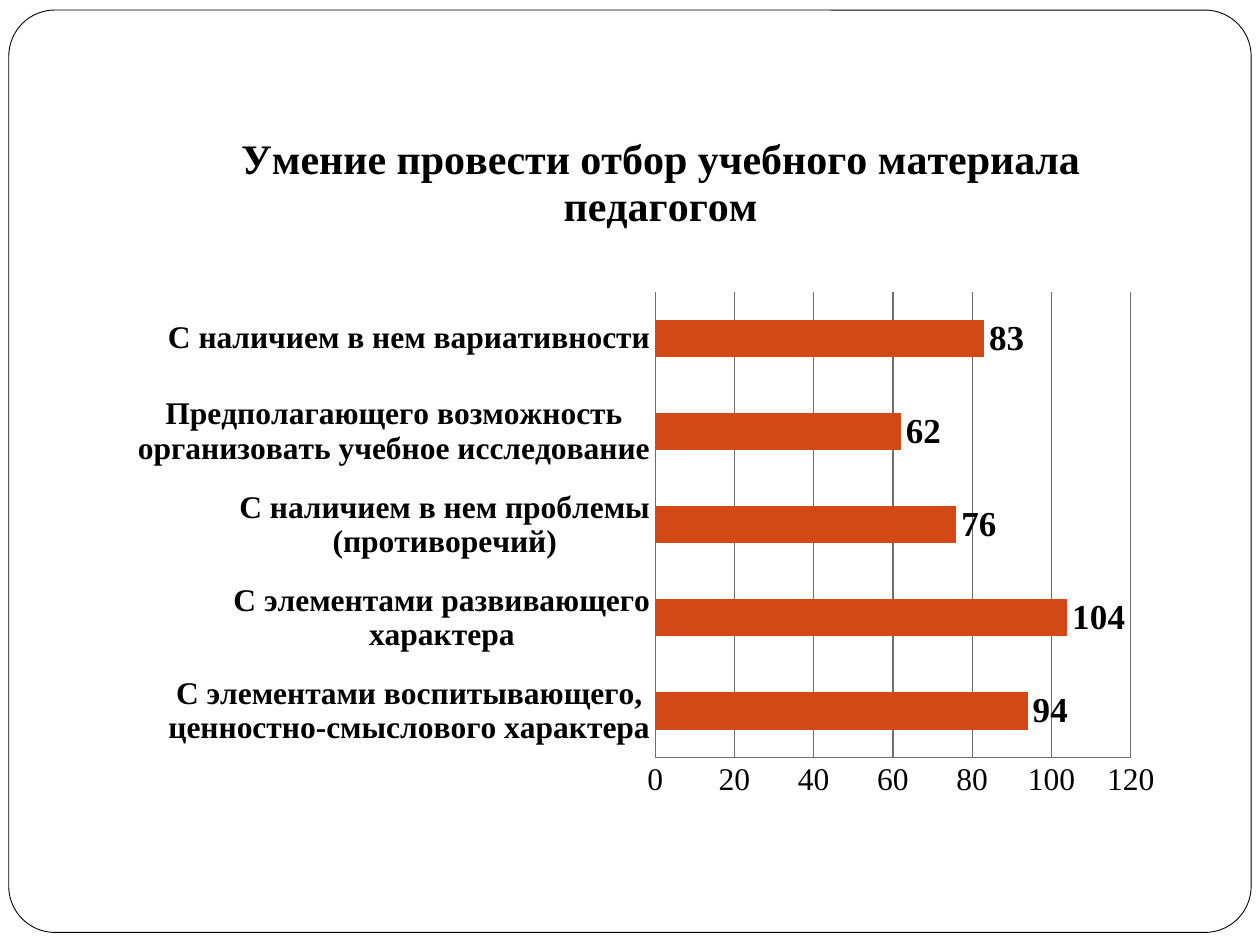
from lxml import etree
from pptx import Presentation
from pptx.chart.data import CategoryChartData
from pptx.dml.color import RGBColor
from pptx.enum.chart import XL_CHART_TYPE, XL_LABEL_POSITION, XL_TICK_MARK
from pptx.enum.shapes import MSO_SHAPE
from pptx.oxml.ns import qn
from pptx.util import Inches, Pt

BAR = XL_CHART_TYPE.BAR_CLUSTERED
OUTSIDE = XL_LABEL_POSITION.OUTSIDE_END
NO_TICK = XL_TICK_MARK.NONE
ROUNDED = MSO_SHAPE.ROUNDED_RECTANGLE

BLACK = RGBColor(0, 0, 0)
WHITE = RGBColor(255, 255, 255)
GRAY = RGBColor(0x6E, 0x6E, 0x6E)
ORANGE = RGBColor(0xD3, 0x48, 0x17)
FONT = "Times New Roman"

TITLE = "Умение провести отбор учебного материала педагогом"
SKILLS = [
    ("С элементами воспитывающего, ценностно-смыслового характера", 94),
    ("С элементами развивающего характера", 104),
    ("С наличием в нем проблемы (противоречий)", 76),
    ("Предполагающего возможность организовать учебное исследование", 62),
    ("С наличием в нем вариативности", 83),
]

# Left, top, width, height in inches
FRAME = (0.07, 0.08, 9.86, 7.32)
CHART = (0.91, 0.68, 8.58, 6.06)
# Shares of the chart's size
PLOT = {"x": 0.5, "y": 0.27, "w": 0.44, "h": 0.61}
HEAD = {"x": 0.11, "y": 0.05}


def style(font, size, bold=False):
    font.name = FONT
    font.size = Pt(size)
    font.bold = bold
    font.color.rgb = BLACK


def place(part, spot, index, inner=False):
    """Give a chart part a manual layout, as shares of the chart."""
    for old in part.findall(qn("c:layout")):
        part.remove(old)
    layout = etree.Element(qn("c:layout"))
    part.insert(index, layout)
    manual = etree.SubElement(layout, qn("c:manualLayout"))
    rules = [("layoutTarget", "inner")] if inner else []
    rules += [(key + "Mode", "edge") for key in "xy"]
    rules += spot.items()
    for tag, val in rules:
        etree.SubElement(manual, qn("c:" + tag)).set("val", str(val))


def add_frame(slide):
    frame = slide.shapes.add_shape(ROUNDED, *map(Inches, FRAME))
    frame.adjustments[0] = 0.05
    frame.shadow.inherit = False
    frame.fill.solid()
    frame.fill.fore_color.rgb = WHITE
    frame.line.color.rgb = BLACK
    frame.line.width = Pt(0.5)


def add_bars(slide):
    data = CategoryChartData()
    data.categories = [name for name, _ in SKILLS]
    data.add_series("Series 1", [val for _, val in SKILLS])
    chart = slide.shapes.add_chart(BAR, *map(Inches, CHART), data).chart
    style(chart.font, 10)
    chart.has_legend = False

    chart.has_title = True
    run = chart.chart_title.text_frame.paragraphs[0].add_run()
    run.text = TITLE
    style(run.font, 24, True)
    space = chart.element.find(qn("c:chart"))
    place(space.find(qn("c:title")), HEAD, 1)
    place(space.find(qn("c:plotArea")), PLOT, 0, inner=True)

    plot = chart.plots[0]
    plot.vary_by_categories = False
    plot.gap_width = 150
    bars = plot.series[0]
    bars.format.fill.solid()
    bars.format.fill.fore_color.rgb = ORANGE
    labels = bars.data_labels
    labels.show_value = True
    labels.position = OUTSIDE
    style(labels.font, 20, True)

    for axis, bold in ((chart.category_axis, True), (chart.value_axis, False)):
        axis.major_tick_mark = axis.minor_tick_mark = NO_TICK
        axis.format.line.color.rgb = GRAY
        style(axis.tick_labels.font, 18, bold)
    scale = chart.value_axis
    scale.minimum_scale, scale.maximum_scale, scale.major_unit = 0, 120, 20
    scale.has_major_gridlines = True
    scale.major_gridlines.format.line.color.rgb = GRAY


def main():
    deck = Presentation()
    deck.slide_width, deck.slide_height = Inches(10), Inches(7.5)
    slide = deck.slides.add_slide(deck.slide_layouts[6])
    add_frame(slide)
    add_bars(slide)
    deck.save("out.pptx")


if __name__ == "__main__":
    main()
